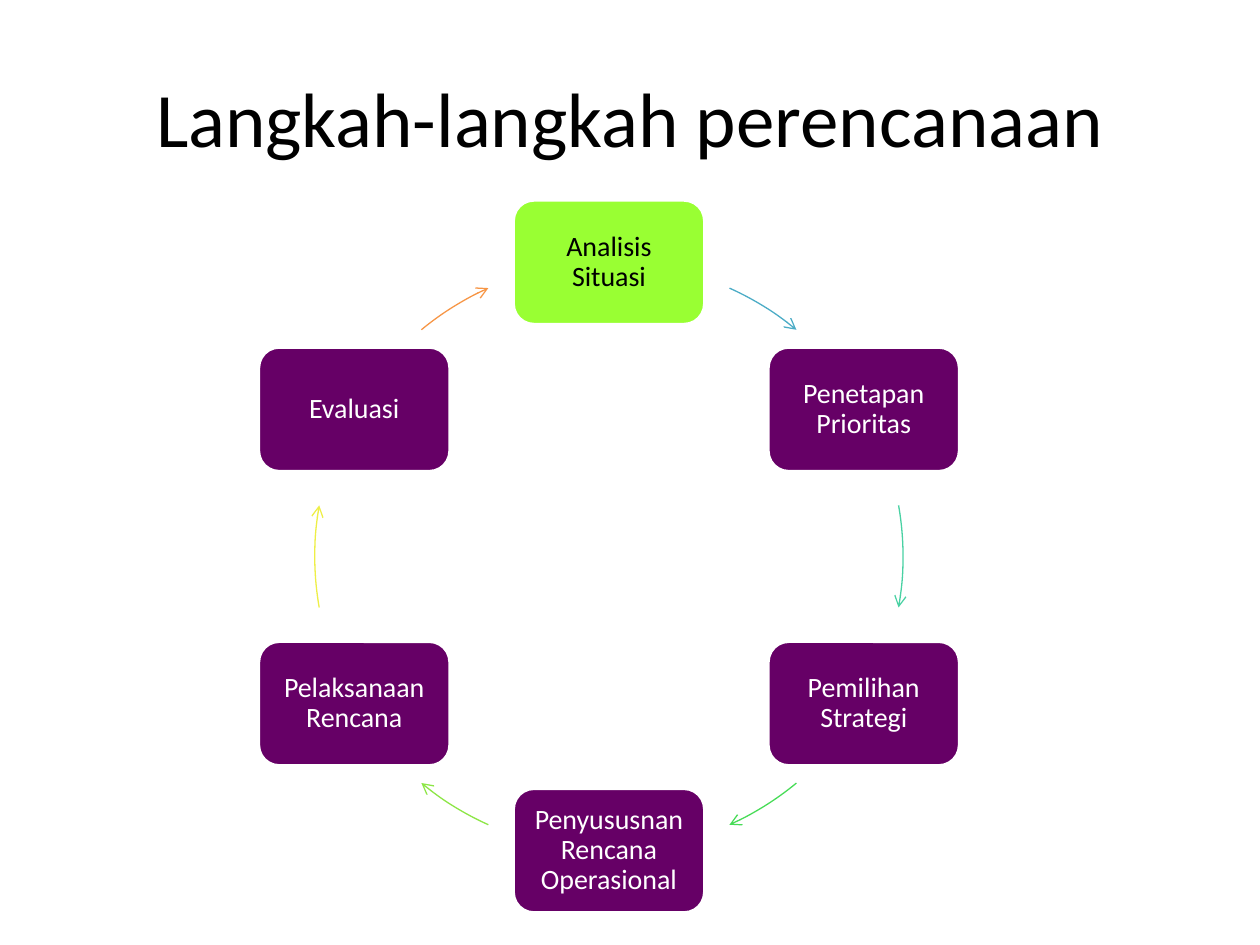
"""Build a slide showing the six planning steps as a cycle."""
import math

from lxml import etree
from pptx import Presentation
from pptx.dml.color import RGBColor
from pptx.enum import shapes, text
from pptx.oxml.ns import qn
from pptx.util import Pt

COLORS = {
    "black": "000000", "white": "FFFFFF", "lime": "99FF33", "purple": "660066",
    "blue": "4BACC6", "teal": "49D1A3", "green": "47DC57",
    "light_green": "8DE646", "yellow": "EEEF46", "orange": "F79646",
}
STEPS = [
    ("Analisis Situasi", "lime", "black", "blue", 294.2, 309.6),
    ("Penetapan Prioritas", "purple", "white", "teal", 350, 10),
    ("Pemilihan Strategi", "purple", "white", "green", 50.4, 65.8),
    ("Penyususnan Rencana Operasional", "purple", "white", "light_green", 114.2, 129.6),
    ("Pelaksanaan Rencana", "purple", "white", "yellow", 170, 190),
    ("Evaluasi", "purple", "white", "orange", 230.4, 245.8),
]
CENTER_X, CENTER_Y, RADIUS = 348, 318, 168.1
BOX_WIDTH, BOX_HEIGHT = 109.5, 71.2


def color(name):
    return RGBColor.from_string(COLORS[name])


def add_run(paragraph, wording, size, color_name):
    run = paragraph.add_run()
    run.text = wording
    run.font.name = "Calibri"
    run.font.size = Pt(size)
    run.font.color.rgb = color(color_name)


presentation = Presentation()
presentation.slide_width, presentation.slide_height = Pt(720), Pt(540)
slide = presentation.slides.add_slide(presentation.slide_layouts[5])

title = slide.shapes.title
title.left, title.top, title.width, title.height = Pt(36), Pt(21.6), Pt(648), Pt(90)
title.text_frame.vertical_anchor = text.MSO_ANCHOR.MIDDLE
title_paragraph = title.text_frame.paragraphs[0]
title_paragraph.alignment = text.PP_ALIGN.CENTER
add_run(title_paragraph, "Langkah-langkah perencanaan", 44, "black")

for index, (label, fill, font_color, arrow_color, start, end) in enumerate(STEPS):
    angle = math.radians(index * 360 / len(STEPS))
    box = slide.shapes.add_shape(
        shapes.MSO_SHAPE.ROUNDED_RECTANGLE,
        Pt(CENTER_X + RADIUS * math.sin(angle) - BOX_WIDTH / 2),
        Pt(CENTER_Y - RADIUS * math.cos(angle) - BOX_HEIGHT / 2),
        Pt(BOX_WIDTH), Pt(BOX_HEIGHT),
    )
    box.shadow.inherit = False
    box.fill.solid()
    box.fill.fore_color.rgb = color(fill)
    box.line.color.rgb = color("white")
    box.line.width = Pt(2)
    frame = box.text_frame
    frame.word_wrap = True
    frame.vertical_anchor = text.MSO_ANCHOR.MIDDLE
    frame.margin_left = frame.margin_right = Pt(5)
    frame.margin_top = frame.margin_bottom = Pt(5)
    paragraph = frame.paragraphs[0]
    paragraph.alignment = text.PP_ALIGN.CENTER
    paragraph.line_spacing = 0.9
    add_run(paragraph, label, 16, font_color)

    arrow = slide.shapes.add_shape(
        shapes.MSO_SHAPE.ARC, Pt(CENTER_X - RADIUS), Pt(CENTER_Y - RADIUS),
        Pt(2 * RADIUS), Pt(2 * RADIUS),
    )
    arrow.adjustments[0] = start * 0.6
    arrow.adjustments[1] = end * 0.6
    arrow.shadow.inherit = False
    arrow.fill.background()
    arrow.line.color.rgb = color(arrow_color)
    arrow.line.width = Pt(0.75)
    etree.SubElement(arrow.line._get_or_add_ln(), qn("a:tailEnd"), type="arrow")

presentation.save("out.pptx")
